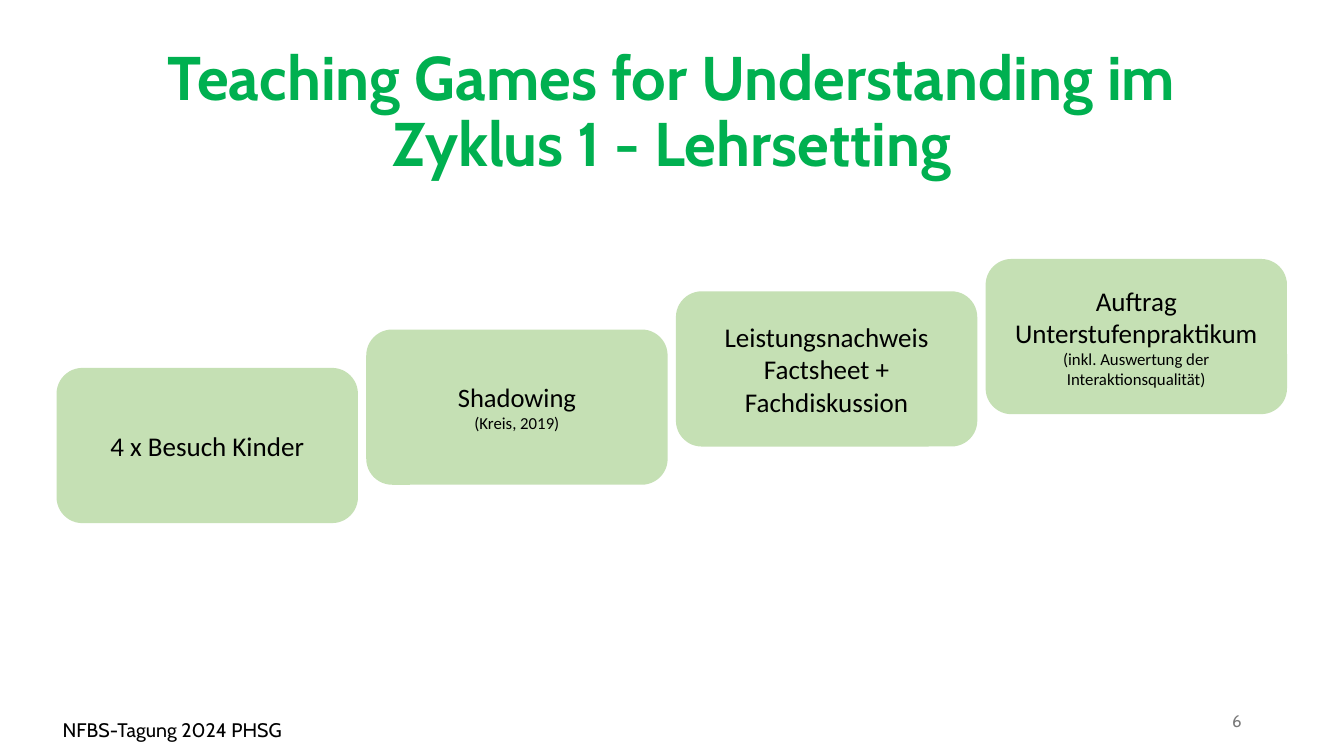
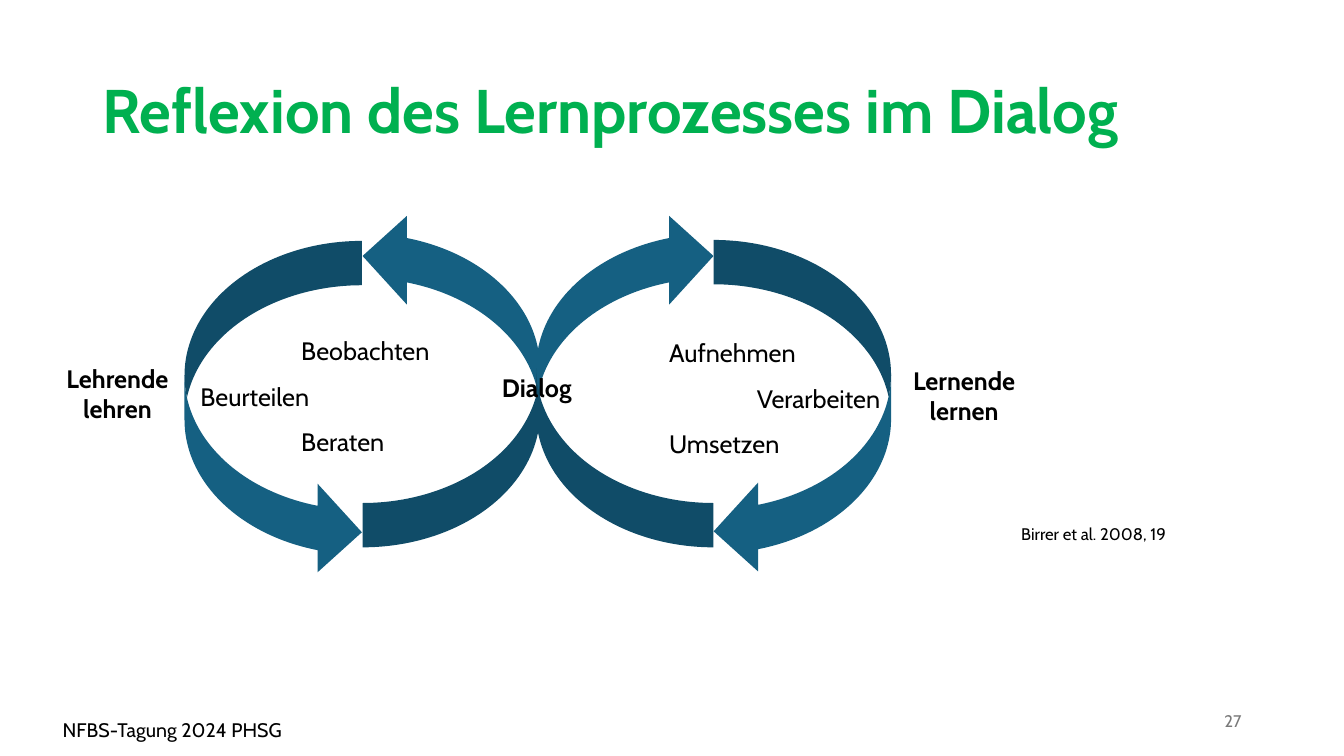
from pptx import Presentation
from pptx.dml.color import RGBColor
from pptx.enum.shapes import MSO_SHAPE
from pptx.enum.text import MSO_ANCHOR, MSO_AUTO_SIZE, PP_ALIGN
from pptx.util import Pt

LEFT, MID, RIGHT = PP_ALIGN.LEFT, PP_ALIGN.CENTER, PP_ALIGN.RIGHT
TOP, CENTRE = MSO_ANCHOR.TOP, MSO_ANCHOR.MIDDLE
CARD = MSO_SHAPE.ROUNDED_RECTANGLE
CURVE_R = MSO_SHAPE.CURVED_RIGHT_ARROW
CURVE_L = MSO_SHAPE.CURVED_LEFT_ARROW

COLORS = {"title": "00B050", "text": "000000", "number": "797979",
          "card": "C5E0B4", "arrow": "156082"}
FONT = "Cabin"
FOOTER = "NFBS-Tagung 2024 PHSG"

# Cards: top edge, then lines with their text size
CARDS = [
    (262.8, [("4 x Besuch Kinder", 19.3)]),
    (235.4, [("Shadowing", 19), ("(Kreis, 2019)", 12)]),
    (208.1, [("Leistungsnachweis", 19.3),
             ("Factsheet + Fachdiskussion", 19.3)]),
    (185, [("Auftrag Unterstufenpraktikum", 19.3),
           ("(inkl. Auswertung der Interaktionsqualität)", 12)]),
]
CARD_LEFT, CARD_STEP, CARD_W, CARD_H = 40.4, 221.2, 215.3, 110.9

# Arrows of the loop: shape, left, top, flips
ARROWS = [
    (CURVE_R, 131.8, 172.1, ()),
    (CURVE_L, 259, 151.2, ("flipV",)),
    (CURVE_R, 509.8, 171.4, ("flipH",)),
    (CURVE_L, 383, 151.2, ("flipH", "flipV")),
]
ARROW_W, ARROW_H = 126.7, 239.8

# Labels around the loop: box, text, line spacing, alignment
LABELS = [
    ((351.4, 257, 76.3, 48.2), "Dialog", Pt(13.5), LEFT),
    ((31, 249.1, 105.8, 64.1), "Lehrende lehren", 1.0, MID),
    ((633.6, 250.6, 110.2, 64.1), "Lernende lernen", 1.0, MID),
]

# Steps inside the loop: box, then lines with indent and alignment
STEPS = [
    ((136.1, 213.8, 200.2, 127.4),
     [("Beobachten", 72, LEFT), ("Beurteilen", 0, LEFT),
      ("Beraten", 72, LEFT)]),
    ((470.9, 215.3, 164.9, 127.4),
     [("Aufnehmen", 0, LEFT), ("Verarbeiten", 0, RIGHT),
      ("Umsetzen", 0, LEFT)]),
]


def rgb(name):
    return RGBColor.from_string(COLORS[name])


def write(frame, lines, anchor=CENTRE, align=LEFT, space=1.0, **style):
    """Fill a frame; each line is a dict of text and its own format."""
    frame.word_wrap = True
    frame.auto_size = MSO_AUTO_SIZE.NONE
    frame.vertical_anchor = anchor
    for i, line in enumerate(lines):
        para = frame.paragraphs[0] if i == 0 else frame.add_paragraph()
        para.alignment = line.get("align", align)
        para.line_spacing = space
        if line.get("indent"):
            props = para._p.get_or_add_pPr()
            props.set("marL", str(Pt(line["indent"])))
            props.set("indent", "0")
        run = para.add_run()
        run.text = line["text"]
        look = {"name": FONT, "size": 18, "bold": False, **style}
        look["size"] = Pt(line.get("size", look["size"]))
        color = look.pop("color", "text")
        for key, value in look.items():
            setattr(run.font, key, value)
        run.font.color.rgb = rgb(color)


def add_text(slide, box, lines, **style):
    frame = slide.shapes.add_textbox(*map(Pt, box)).text_frame
    write(frame, lines, **style)
    return frame


def add_shape(slide, kind, box, color):
    shape = slide.shapes.add_shape(kind, *map(Pt, box))
    shape.shadow.inherit = False
    shape.fill.solid()
    shape.fill.fore_color.rgb = rgb(color)
    shape.line.fill.background()
    return shape


def add_slide(deck, title, number, align):
    """Add a slide with title, page number and footer."""
    slide = deck.slides.add_slide(deck.slide_layouts[5])
    head = slide.shapes.title
    head.left, head.top, head.width, head.height = map(
        Pt, (66, 28.8, 828, 104.4))
    write(head.text_frame, [{"text": title}], align=align, space=0.9,
          size=44, bold=True, color="title")
    add_text(slide, (678, 500.5, 216, 28.8), [{"text": number}],
             align=RIGHT, size=12, color="number")
    add_text(slide, (37.7, 509, 620, 24.5), [{"text": FOOTER}],
             anchor=TOP, size=14)
    return slide


def add_setting(deck):
    slide = add_slide(
        deck, "Teaching Games for Understanding im Zyklus 1 - Lehrsetting",
        "6", MID)
    for i, (top, lines) in enumerate(CARDS):
        box = (CARD_LEFT + i * CARD_STEP, top, CARD_W, CARD_H)
        card = add_shape(slide, CARD, box, "card")
        write(card.text_frame, [{"text": t, "size": s} for t, s in lines],
              align=MID, name="Calibri")


def add_dialog(deck):
    slide = add_slide(deck, "Reflexion des Lernprozesses im Dialog",
                      "27", LEFT)
    source = add_text(slide, (729.4, 372.2, 181.4, 28.1),
                      [{"text": "Birrer et al. 2008, 19"}],
                      anchor=TOP, space=1.12, size=12)
    for side in ("left", "top", "right", "bottom"):
        setattr(source, "margin_" + side, 0)
    for kind, left, top, flips in ARROWS:
        arrow = add_shape(slide, kind, (left, top, ARROW_W, ARROW_H), "arrow")
        for flip in flips:
            arrow.element.spPr.get_or_add_xfrm().set(flip, "1")
    for box, text, space, align in LABELS:
        add_text(slide, box, [{"text": text}], align=align, space=space,
                 bold=True)
    for box, lines in STEPS:
        add_text(slide, box,
                 [{"text": t, "indent": n, "align": a} for t, n, a in lines],
                 space=1.5)


def main():
    deck = Presentation()
    deck.slide_width, deck.slide_height = Pt(960), Pt(540)
    add_setting(deck)
    add_dialog(deck)
    deck.save("out.pptx")


if __name__ == "__main__":
    main()
